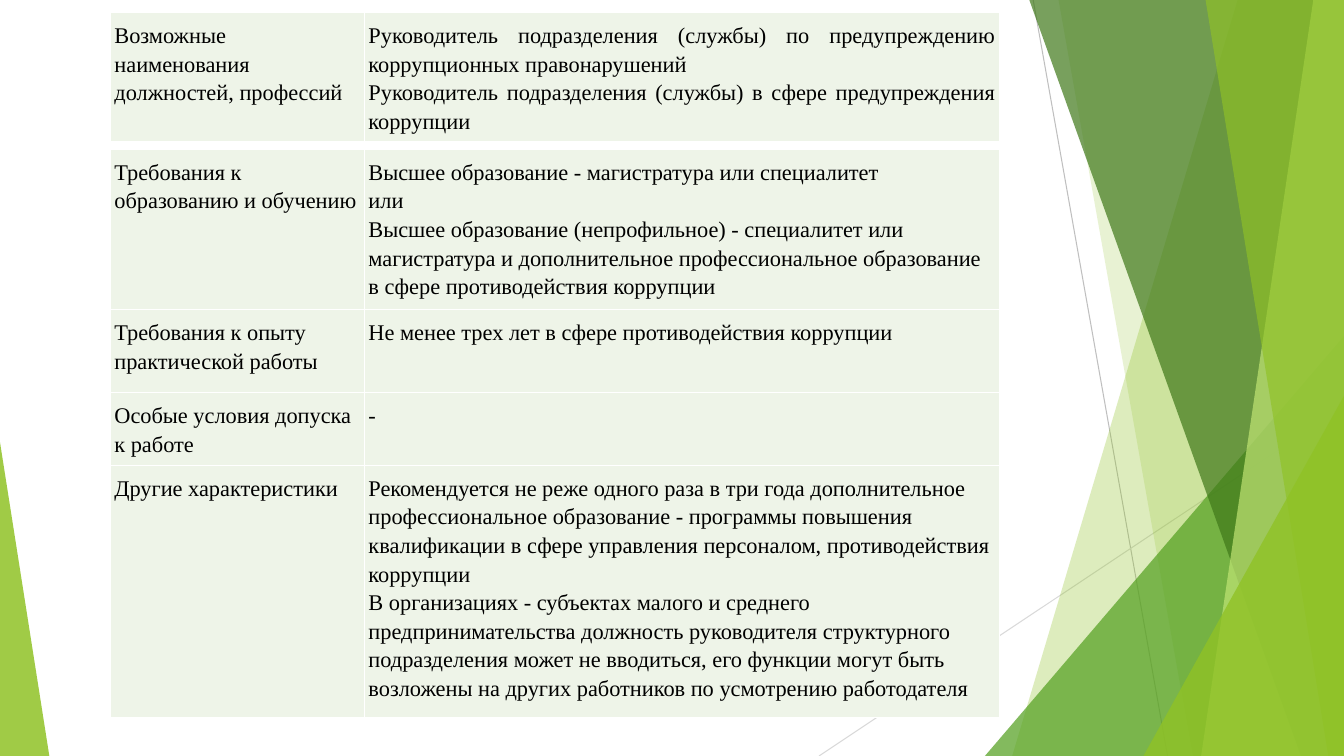
"""Build a slide of job requirements beside a green facet design."""
from lxml import etree
from pptx import Presentation
from pptx.dml.color import RGBColor
from pptx.enum.shapes import MSO_CONNECTOR, MSO_SHAPE
from pptx.enum.text import PP_ALIGN
from pptx.oxml.ns import qn
from pptx.util import Pt

PX = 9525
WIDE, HIGH = 1280, 720
LEFT, COLS = 105, (242, 605)
FONT = "Times New Roman"
LINE, TRI = MSO_CONNECTOR.STRAIGHT, MSO_SHAPE.ISOSCELES_TRIANGLE
JUST, START = PP_ALIGN.JUSTIFY, PP_ALIGN.LEFT

BLACK = RGBColor(0x00, 0x00, 0x00)
WHITE = RGBColor(0xFF, 0xFF, 0xFF)
PALE = RGBColor(0xEE, 0xF4, 0xE8)
GRAY = RGBColor(0xBF, 0xBF, 0xBF)
SILVER = RGBColor(0xD9, 0xD9, 0xD9)
LIME = RGBColor(0x90, 0xC2, 0x26)
GREEN = RGBColor(0x54, 0xA0, 0x21)
DARK = RGBColor(0x3F, 0x78, 0x19)
LIGHT = RGBColor(0xC0, 0xE4, 0x74)

JOBS = [
    (["Возможные наименования должностей, профессий"],
     ["Руководитель подразделения (службы) по предупреждению коррупционных правонарушений",
      "Руководитель подразделения (службы) в сфере предупреждения коррупции"]),
]
NEEDS = [
    (["Требования к образованию и обучению"],
     ["Высшее образование - магистратура или специалитет",
      "или",
      "Высшее образование (непрофильное) - специалитет или магистратура и "
      "дополнительное профессиональное образование в сфере противодействия коррупции"]),
    (["Требования к опыту практической работы"],
     ["Не менее трех лет в сфере противодействия коррупции"]),
    (["Особые условия допуска к работе"], ["-"]),
    (["Другие характеристики"],
     ["Рекомендуется не реже одного раза в три года дополнительное профессиональное "
      "образование - программы повышения квалификации в сфере управления персоналом, "
      "противодействия коррупции",
      "В организациях - субъектах малого и среднего предпринимательства должность "
      "руководителя структурного подразделения может не вводиться, его функции могут "
      "быть возложены на других работников по усмотрению работодателя"]),
]


def add_line(slide, ends, color):
    """Draw a thin straight line without shadow."""
    line = slide.shapes.add_connector(LINE, *(n * PX for n in ends))
    line.line.color.rgb = color
    line.line.width = Pt(0.75)
    etree.SubElement(line._element.spPr, qn("a:effectLst"))


def paint(shape, color, alpha):
    """Fill a shape with a translucent colour, with no outline or shadow."""
    shape.shadow.inherit = False
    shape.line.fill.background()
    shape.fill.solid()
    shape.fill.fore_color.rgb = color
    tint = shape._element.spPr.find(qn("a:solidFill"))[0]
    etree.SubElement(tint, qn("a:alpha"), val=str(alpha * 1000))


def add_facet(slide, top, base, color, alpha):
    """Draw a full-height facet from a slanted edge to the right side."""
    pen = slide.shapes.build_freeform(top, -1, scale=PX)
    pen.add_line_segments([(WIDE, -1), (WIDE, HIGH), (base, HIGH)], close=True)
    paint(pen.convert_to_shape(), color, alpha)


def add_wedge(slide, left, top, width, peak, color, alpha):
    """Draw a right triangle standing on the bottom edge."""
    box = (left, top, width, HIGH - top)
    wedge = slide.shapes.add_shape(TRI, *(n * PX for n in box))
    wedge.adjustments[0] = peak
    paint(wedge, color, alpha)


def add_edges(cell):
    """Give a cell white borders on all four sides."""
    props = cell._tc.get_or_add_tcPr()
    for i, side in enumerate(("lnL", "lnR", "lnT", "lnB")):
        edge = etree.Element(qn("a:" + side), w=str(Pt(1)))
        fill = etree.SubElement(edge, qn("a:solidFill"))
        etree.SubElement(fill, qn("a:srgbClr"), val=str(WHITE))
        props.insert(i, edge)


def fill_cell(cell, texts, align):
    """Write paragraphs into a pale cell."""
    cell.fill.solid()
    cell.fill.fore_color.rgb = PALE
    cell.margin_left = cell.margin_right = 4 * PX
    cell.margin_top = cell.margin_bottom = 7 * PX
    add_edges(cell)
    frame = cell.text_frame
    for i, text in enumerate(texts):
        para = frame.add_paragraph() if i else frame.paragraphs[0]
        para.alignment = align
        para.line_spacing = 1.15
        run = para.add_run()
        run.text = text
        run.font.name = FONT
        run.font.size = Pt(16)
        run.font.color.rgb = BLACK


def add_grid(slide, top, rows, data, align):
    """Add a two-column table."""
    box = (LEFT, top, sum(COLS), sum(rows))
    grid = slide.shapes.add_table(len(rows), len(COLS), *(n * PX for n in box)).table
    grid.first_row = grid.horz_banding = False
    for col, width in zip(grid.columns, COLS):
        col.width = width * PX
    for row, height, cells in zip(grid.rows, rows, data):
        row.height = height * PX
        for cell, texts in zip(row.cells, cells):
            fill_cell(cell, texts, align)


def main():
    """Build and save the slide."""
    deck = Presentation()
    deck.slide_width, deck.slide_height = WIDE * PX, HIGH * PX
    slide = deck.slides.add_slide(deck.slide_layouts[6])
    add_line(slide, (984, 0, 1112, HIGH), GRAY)
    add_line(slide, (WIDE, 387, 780, HIGH), SILVER)
    add_facet(slide, 1179, 964, LIME, 30)
    add_facet(slide, 1008, 1136, LIME, 20)
    add_wedge(slide, 938, 320, 342, 1, GREEN, 72)
    add_facet(slide, 980, 1239, DARK, 70)
    add_facet(slide, 1251, 1144, LIGHT, 70)
    add_facet(slide, 1148, 1265, LIME, 65)
    add_wedge(slide, 1089, 377, 191, 1, LIME, 80)
    add_wedge(slide, 0, 421, 47, 0, LIME, 85)
    add_grid(slide, 12, [122], JOBS, JUST)
    add_grid(slide, 142, [153, 79, 69, 240], NEEDS, START)
    deck.save("out.pptx")


if __name__ == "__main__":
    main()
